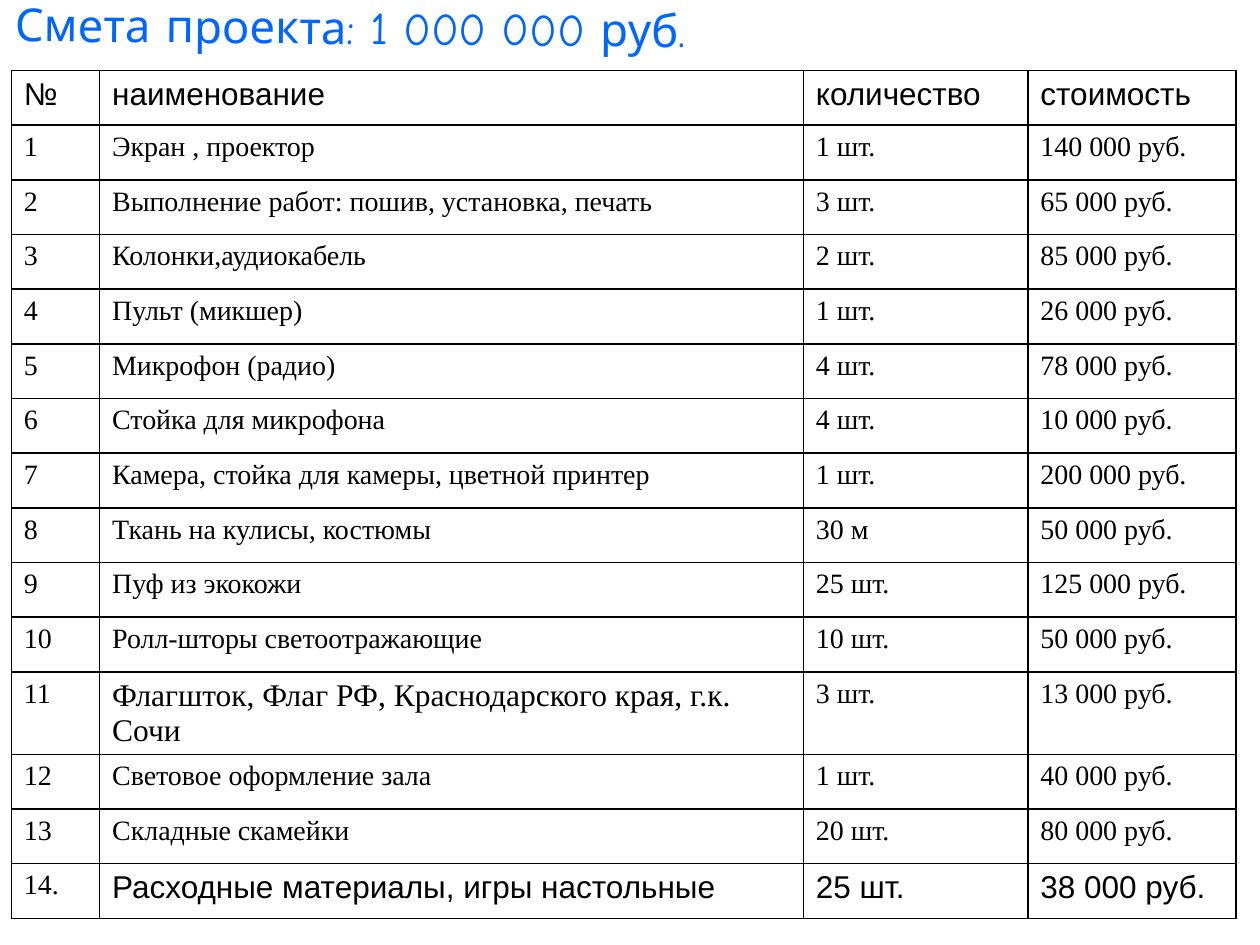
from dataclasses import dataclass

from lxml.etree import SubElement
from pptx import Presentation
from pptx.dml.color import RGBColor as Color
from pptx.enum.text import MSO_ANCHOR as Anchor, PP_ALIGN as Align
from pptx.oxml.ns import qn
from pptx.util import Inches, Pt

TITLE_ONLY = 5


@dataclass(frozen=True)
class Theme:
    accent: str = "0066FF"
    ink: str = "000000"
    line: str = "000000"
    line_width: float = 1
    title: tuple = ("Comic Neue", 26)
    strong: tuple = ("Arial", 18)
    body: tuple = ("Times New Roman", 16)
    large_body: tuple = ("Times New Roman", 18)


class SlideBuilder:
    """Places elements by shares of the slide's width and height."""

    def __init__(self, presentation, theme):
        self.theme = theme
        self.width = presentation.slide_width
        self.height = presentation.slide_height
        layout = presentation.slide_layouts[TITLE_ONLY]
        self.slide = presentation.slides.add_slide(layout)

    def box(self, left, top, width, height):
        return {"left": int(left * self.width), "top": int(top * self.height),
                "width": int(width * self.width), "height": int(height * self.height)}

    @staticmethod
    def apply(target, values):
        for name, value in values.items():
            setattr(target, name, value)

    def add_text(self, frame, text, style, color):
        paragraph = frame.paragraphs[0]
        paragraph.alignment = Align.LEFT
        run = paragraph.add_run()
        run.text = text
        name, size = style
        self.apply(run.font, {"name": name, "size": Pt(size), "bold": False})
        run.font.color.rgb = Color.from_string(color)

    def title(self, text, area, rotation):
        shape = self.slide.shapes.title
        self.apply(shape, {**self.box(*area), "rotation": rotation})
        margins = dict.fromkeys(
            ("margin_left", "margin_top", "margin_right", "margin_bottom"), 0)
        self.apply(shape.text_frame, {
            **margins, "word_wrap": True, "vertical_anchor": Anchor.MIDDLE})
        self.add_text(shape.text_frame, text, self.theme.title, self.theme.accent)

    def border(self, cell):
        properties = cell._tc.get_or_add_tcPr()
        for side in ("a:lnL", "a:lnR", "a:lnT", "a:lnB"):
            line = SubElement(properties, qn(side), w=str(Pt(self.theme.line_width)))
            fill = SubElement(line, qn("a:solidFill"))
            SubElement(fill, qn("a:srgbClr"), val=self.theme.line)

    def table(self, rows, area, column_shares, style_of):
        box = self.box(*area)
        table = self.slide.shapes.add_table(
            len(rows), len(column_shares), **box).table
        self.apply(table, {"first_row": False, "horz_banding": False})
        for column, share in zip(table.columns, column_shares):
            column.width = int(box["width"] * share / sum(column_shares))
        for row_index, row in enumerate(rows):
            for column_index, text in enumerate(row):
                cell = table.cell(row_index, column_index)
                self.border(cell)
                cell.fill.background()
                style = style_of(row_index, column_index)
                self.add_text(cell.text_frame, text, style, self.theme.ink)


HEADER = ("№", "наименование", "количество", "стоимость")
ITEMS = [
    ("1", "Экран , проектор", "1 шт.", "140 000 руб."),
    ("2", "Выполнение работ: пошив, установка, печать", "3 шт.", "65 000 руб."),
    ("3", "Колонки,аудиокабель", "2 шт.", "85 000 руб."),
    ("4", "Пульт (микшер)", "1 шт.", "26 000 руб."),
    ("5", "Микрофон (радио)", "4 шт.", "78 000 руб."),
    ("6", "Стойка для микрофона", "4 шт.", "10 000 руб."),
    ("7", "Камера, стойка для камеры, цветной принтер", "1 шт.", "200 000 руб."),
    ("8", "Ткань на кулисы, костюмы", "30 м", "50 000 руб."),
    ("9", "Пуф из экокожи", "25 шт.", "125 000 руб."),
    ("10", "Ролл-шторы светоотражающие", "10 шт.", "50 000 руб."),
    ("11", "Флагшток, Флаг РФ, Краснодарского края, г.к. Сочи", "3 шт.", "13 000 руб."),
    ("12", "Световое оформление зала", "1 шт.", "40 000 руб."),
    ("13", "Складные скамейки", "20 шт.", "80 000 руб."),
    ("14.", "Расходные материалы, игры настольные", "25 шт.", "38 000 руб."),
]
FLAG_ROW = 11


def main():
    presentation = Presentation()
    width, height = 10, 7.5
    presentation.slide_width, presentation.slide_height = Inches(width), Inches(height)
    theme = Theme()
    builder = SlideBuilder(presentation, theme)

    # Heading with the total
    builder.title("Смета проекта: 1 000 000 руб.",
                  (0.12 / width, -0.03 / height, 7.52 / width, 0.5 / height),
                  rotation=0.5)

    # Budget table: header and last item stand out
    def style_of(row, column):
        if row == 0 or (row == len(ITEMS) and column > 0):
            return theme.strong
        if row == FLAG_ROW and column == 1:
            return theme.large_body
        return theme.body

    builder.table([HEADER, *ITEMS],
                  (0.09 / width, 0.56 / height, 9.72 / width, 6.51 / height),
                  (0.7, 5.58, 1.78, 1.65), style_of)

    presentation.save("out.pptx")


if __name__ == "__main__":
    main()
